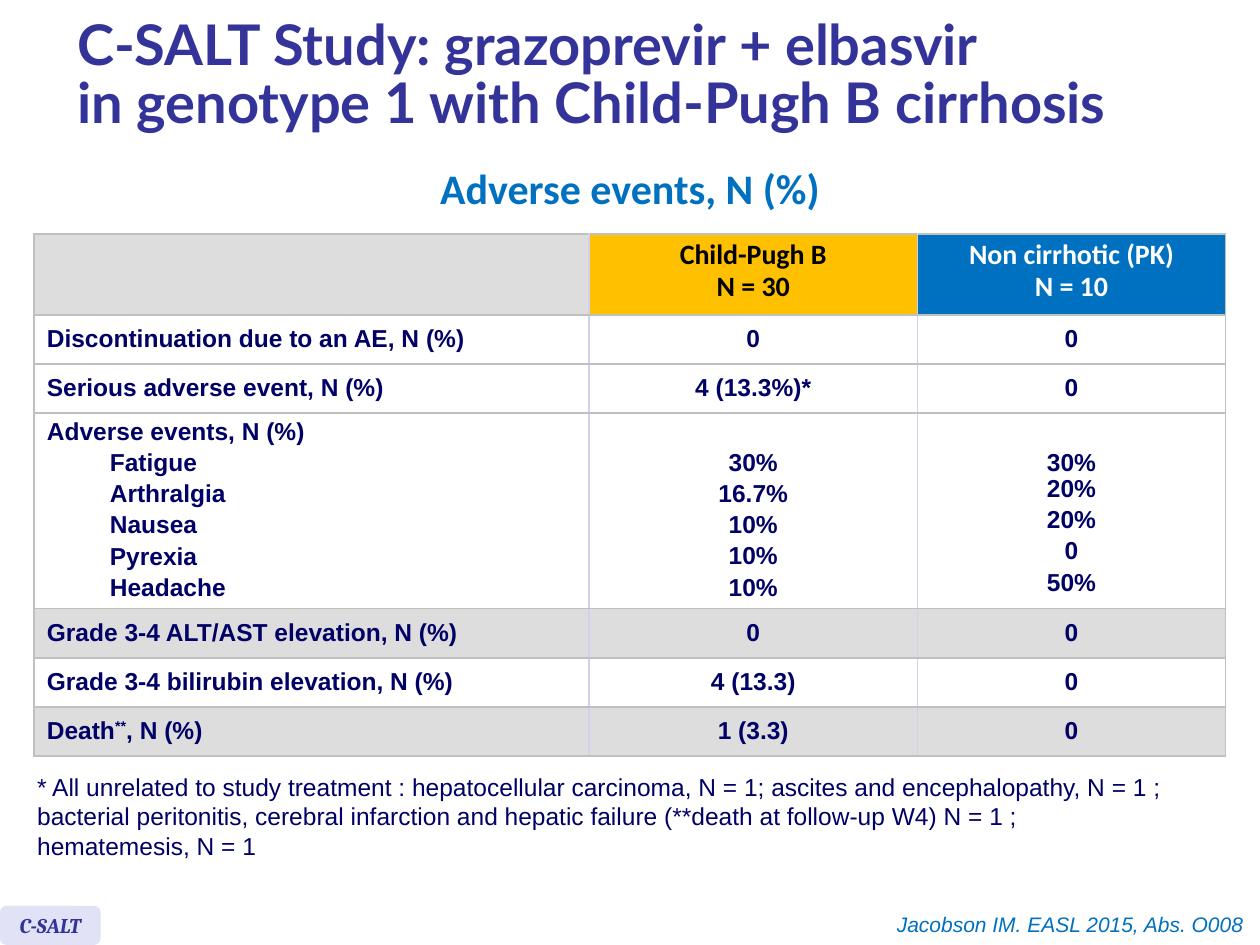
from lxml.etree import SubElement
from pptx import Presentation
from pptx.dml.color import RGBColor
from pptx.enum.shapes import MSO_SHAPE
from pptx.enum.text import MSO_ANCHOR, MSO_AUTO_SIZE, PP_ALIGN
from pptx.oxml.ns import qn
from pptx.util import Cm, Pt

COLOURS = {
    "title": "333399", "blue": "0070C0", "navy": "000066", "black": "000000",
    "white": "FFFFFF", "grey": "DDDDDD", "amber": "FFC000", "badge": "E2E2F6",
    "outer": "C0C0C0", "inner": "D0D0F0",
}
COLUMN_WIDTHS = [11.18, 6.63, 6.2]
HEADER_HEIGHT, ROW_HEIGHT, LIST_HEIGHT = 1.63, 0.99, 3.94
LIST_INDENT = 1.27
LIST_TOP_MARGIN = 0.75
HEADERS = [
    ([], "grey", "black"),
    (["Child-Pugh B", "N = 30"], "amber", "black"),
    (["Non cirrhotic (PK)", "N = 10"], "blue", "white"),
]
EVENTS = ["Adverse events, N (%)", "Fatigue", "Arthralgia", "Nausea", "Pyrexia", "Headache"]
ROWS = [
    ("white", [["Discontinuation due to an AE, N (%)"], ["0"], ["0"]]),
    ("white", [["Serious adverse event, N (%)"], ["4 (13.3%)*"], ["0"]]),
    ("white", [EVENTS, ["30%", "16.7%", "10%", "10%", "10%"], ["30%\n20%", "20%", "0", "50%"]]),
    ("grey", [["Grade 3-4 ALT/AST elevation, N (%)"], ["0"], ["0"]]),
    ("white", [["Grade 3-4 bilirubin elevation, N (%)"], ["4 (13.3)"], ["0"]]),
    ("grey", [[("Death", "**", ", N (%)")], ["1 (3.3)"], ["0"]]),
]
FOOTNOTE = (
    "* All unrelated to study treatment : hepatocellular carcinoma, N = 1; "
    "ascites and encephalopathy, N = 1 ; bacterial peritonitis, cerebral infarction "
    "and hepatic failure (**death at follow-up W4) N = 1 ; hematemesis, N = 1"
)


def colour(name):
    return RGBColor.from_string(COLOURS[name])


def add_span(para, text, font, size, shade, bold=False, italic=False):
    span = para.add_run()
    span.text = text
    span.font.name = font
    span.font.size = Pt(size)
    span.font.bold = bold
    span.font.italic = italic
    span.font.color.rgb = colour(shade)
    return span


def add_lines(para, text, *style, **emphasis):
    for index, line in enumerate(text.split("\n")):
        if index:
            para.add_line_break()
        add_span(para, line, *style, **emphasis)


def place(shape, left, top, width, height):
    shape.left, shape.top = Cm(left), Cm(top)
    shape.width, shape.height = Cm(width), Cm(height)


def add_title(page, text):
    title = page.shapes.title
    place(title, 1.3, 0.2, 23.19, 2.72)
    frame = title.text_frame
    frame.auto_size = MSO_AUTO_SIZE.NONE
    frame.vertical_anchor = MSO_ANCHOR.MIDDLE
    para = frame.paragraphs[0]
    para.alignment = PP_ALIGN.LEFT
    para.line_spacing = 0.85
    add_lines(para, text, "Lato", 32, "title", bold=True)


def add_text(page, bounds, text, size, shade, align, font="Arial", wrap=False, spacing=None, **emphasis):
    box = page.shapes.add_textbox(*map(Cm, bounds))
    frame = box.text_frame
    frame.word_wrap = wrap
    frame.auto_size = MSO_AUTO_SIZE.SHAPE_TO_FIT_TEXT
    para = frame.paragraphs[0]
    para.alignment = align
    if spacing:
        para.line_spacing = Pt(spacing)
    add_span(para, text, font, size, shade, **emphasis)


def add_badge(page, text):
    badge = page.shapes.add_shape(MSO_SHAPE.ROUNDED_RECTANGLE, Cm(0), Cm(18.26), Cm(2.03), Cm(0.79))
    badge.shadow.inherit = False
    badge.fill.solid()
    badge.fill.fore_color.rgb = colour("badge")
    badge.line.fill.background()
    frame = badge.text_frame
    frame.word_wrap = False
    frame.vertical_anchor = MSO_ANCHOR.MIDDLE
    para = frame.paragraphs[0]
    para.alignment = PP_ALIGN.CENTER
    add_span(para, text, "Cambria", 12, "title", bold=True, italic=True)


def set_borders(cell, column):
    last = len(COLUMN_WIDTHS) - 1
    sides = {
        "a:lnL": "inner" if column > 0 else "outer",
        "a:lnR": "inner" if column < last else "outer",
        "a:lnT": "outer",
        "a:lnB": "outer",
    }
    properties = cell._tc.get_or_add_tcPr()
    for tag, shade in sides.items():
        line = SubElement(properties, qn(tag), w=str(Pt(1)))
        fill = SubElement(line, qn("a:solidFill"))
        SubElement(fill, qn("a:srgbClr"), val=COLOURS[shade])


def fill_cell(cell, column, paragraphs, fill, font, size, shade):
    set_borders(cell, column)
    cell.fill.solid()
    cell.fill.fore_color.rgb = colour(fill)
    cell.vertical_anchor = MSO_ANCHOR.MIDDLE
    frame = cell.text_frame
    for index, content in enumerate(paragraphs):
        para = frame.add_paragraph() if index else frame.paragraphs[0]
        para.alignment = PP_ALIGN.CENTER if column else PP_ALIGN.LEFT
        para.line_spacing = Pt(15)
        if index:
            para.space_before = Pt(size * 0.2)
            if not column:
                para.level = 1
                para._p.get_or_add_pPr().set("marL", str(Cm(LIST_INDENT)))
        if isinstance(content, tuple):
            for part in content:
                span = add_span(para, part, font, size, shade, bold=True)
                if part == "**":
                    span.font._element.set("baseline", "30000")
        else:
            add_lines(para, content, font, size, shade, bold=True)


def add_events_table(page):
    heights = [HEADER_HEIGHT] + [LIST_HEIGHT if cells[0] is EVENTS else ROW_HEIGHT for _, cells in ROWS]
    graphic = page.shapes.add_table(
        len(heights), len(COLUMN_WIDTHS), Cm(0.69), Cm(4.72), Cm(sum(COLUMN_WIDTHS)), Cm(sum(heights)))
    table = graphic.table
    table.horz_banding = False
    for column, width in zip(table.columns, COLUMN_WIDTHS):
        column.width = Cm(width)
    for row, height in zip(table.rows, heights):
        row.height = Cm(height)
    for column, (paragraphs, fill, shade) in enumerate(HEADERS):
        fill_cell(table.cell(0, column), column, paragraphs, fill, "Calibri", 16, shade)
    for row, (fill, cells) in enumerate(ROWS, 1):
        for column, paragraphs in enumerate(cells):
            cell = table.cell(row, column)
            fill_cell(cell, column, paragraphs, fill, "Arial", 14, "navy")
            if cells[0] is EVENTS:
                cell.vertical_anchor = MSO_ANCHOR.TOP
                if column:
                    cell.margin_top = Cm(LIST_TOP_MARGIN)


def main():
    deck = Presentation()
    deck.slide_width, deck.slide_height = Cm(25.4), Cm(19.05)
    page = deck.slides.add_slide(deck.slide_layouts[5])
    add_events_table(page)
    add_title(page, "C-SALT Study: grazoprevir + elbasvir\nin genotype 1 with Child-Pugh B cirrhosis")
    add_text(page, (8.56, 3.33, 8.28, 1.12), "Adverse events, N (%)", 24, "blue",
             PP_ALIGN.CENTER, font="Calibri", spacing=23.6, bold=True)
    add_text(page, (0.5, 15.44, 23.4, 2.06), FOOTNOTE, 14, "navy", PP_ALIGN.LEFT, wrap=True)
    add_text(page, (17.65, 18.26, 7.67, 0.76), "Jacobson IM. EASL 2015, Abs. O008", 12, "blue",
             PP_ALIGN.RIGHT, italic=True)
    add_badge(page, "C-SALT")
    deck.save("out.pptx")


if __name__ == "__main__":
    main()
